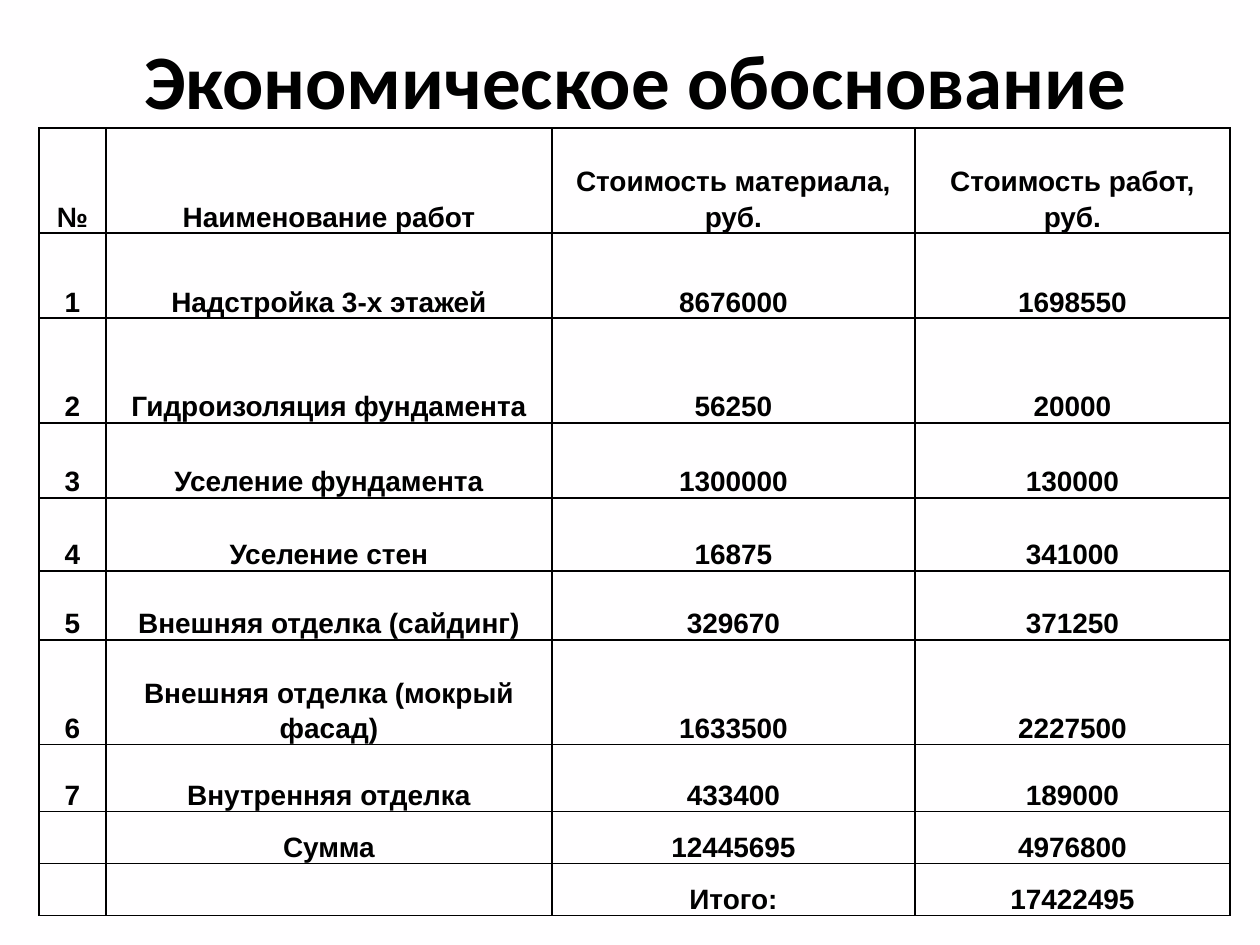
import lxml.etree
import pptx
import pptx.dml.color
import pptx.enum.text
import pptx.oxml.ns
import pptx.util

EMU_PER_PX = 914400 / 126
BLACK = "000000"
COLUMN_WIDTHS = [67, 446, 363, 315]
ROW_HEIGHTS = [105, 85, 105, 75, 73, 69, 105, 67, 52, 52]
COST_ROWS = [
    ("№", "Наименование работ", "Стоимость материала, руб.", "Стоимость работ, руб."),
    ("1", "Надстройка 3-х этажей", "8676000", "1698550"),
    ("2", "Гидроизоляция фундамента", "56250", "20000"),
    ("3", "Уселение фундамента", "1300000", "130000"),
    ("4", "Уселение стен", "16875", "341000"),
    ("5", "Внешняя отделка (сайдинг)", "329670", "371250"),
    ("6", "Внешняя отделка (мокрый фасад)", "1633500", "2227500"),
    ("7", "Внутренняя отделка", "433400", "189000"),
    ("", "Сумма", "12445695", "4976800"),
    ("", "", "Итого:", "17422495"),
]


def px(length):
    return pptx.util.Emu(round(length * EMU_PER_PX))


def color(hex_string):
    return pptx.dml.color.RGBColor.from_string(hex_string)


def style_paragraph(paragraph, font_name, size):
    paragraph.alignment = pptx.enum.text.PP_ALIGN.CENTER
    paragraph.font.name = font_name
    paragraph.font.size = pptx.util.Pt(size)
    paragraph.font.bold = True
    paragraph.font.color.rgb = color(BLACK)


def add_borders(cell):
    properties = cell._tc.get_or_add_tcPr()
    for position, side in enumerate(("lnL", "lnR", "lnT", "lnB")):
        line = lxml.etree.Element(pptx.oxml.ns.qn(f"a:{side}"), w=str(pptx.util.Pt(1)))
        fill = lxml.etree.SubElement(line, pptx.oxml.ns.qn("a:solidFill"))
        lxml.etree.SubElement(fill, pptx.oxml.ns.qn("a:srgbClr"), val=BLACK)
        properties.insert(position, line)


def add_title(slide, left, top, width, height):
    shape = slide.shapes.add_textbox(px(left), px(top), px(width), px(height))
    text_frame = shape.text_frame
    text_frame.word_wrap = True
    text_frame.vertical_anchor = pptx.enum.text.MSO_ANCHOR.MIDDLE
    text_frame.text = "Экономическое обоснование"
    style_paragraph(text_frame.paragraphs[0], "Calibri", 44)


def fill_cell(cell, text):
    cell.fill.background()
    cell.vertical_anchor = pptx.enum.text.MSO_ANCHOR.BOTTOM
    cell.margin_left = cell.margin_right = px(9)
    cell.margin_top = cell.margin_bottom = 0
    cell.text = text
    paragraph = cell.text_frame.paragraphs[0]
    paragraph.line_spacing = 1.15
    style_paragraph(paragraph, "Arial", 16)
    add_borders(cell)


def add_cost_table(slide, left, top):
    table = slide.shapes.add_table(
        len(ROW_HEIGHTS), len(COLUMN_WIDTHS),
        px(left), px(top), px(sum(COLUMN_WIDTHS)), px(sum(ROW_HEIGHTS)),
    ).table
    table.first_row = False
    table.horz_banding = False
    for column, width in zip(table.columns, COLUMN_WIDTHS):
        column.width = px(width)
    for row, height, texts in zip(table.rows, ROW_HEIGHTS, COST_ROWS):
        row.height = px(height)
        for cell, text in zip(row.cells, texts):
            fill_cell(cell, text)


def main():
    presentation = pptx.Presentation()
    presentation.slide_width = px(1260)
    presentation.slide_height = px(945)
    slide = presentation.slides.add_slide(presentation.slide_layouts[6])
    slide.background.fill.solid()
    slide.background.fill.fore_color.rgb = color("FFFEFF")
    add_title(slide, 69, 0, 1134, 158)
    add_cost_table(slide, 39, 128)
    presentation.save("out.pptx")


if __name__ == "__main__":
    main()
